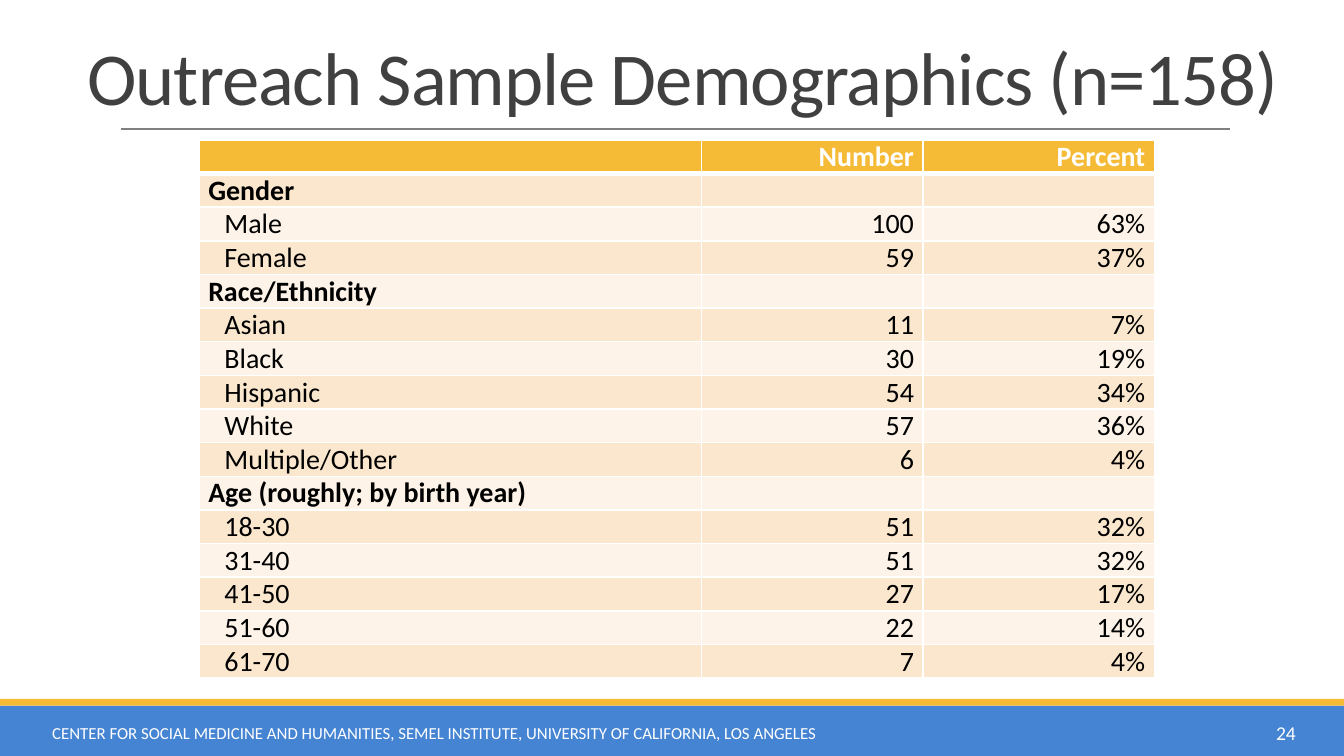
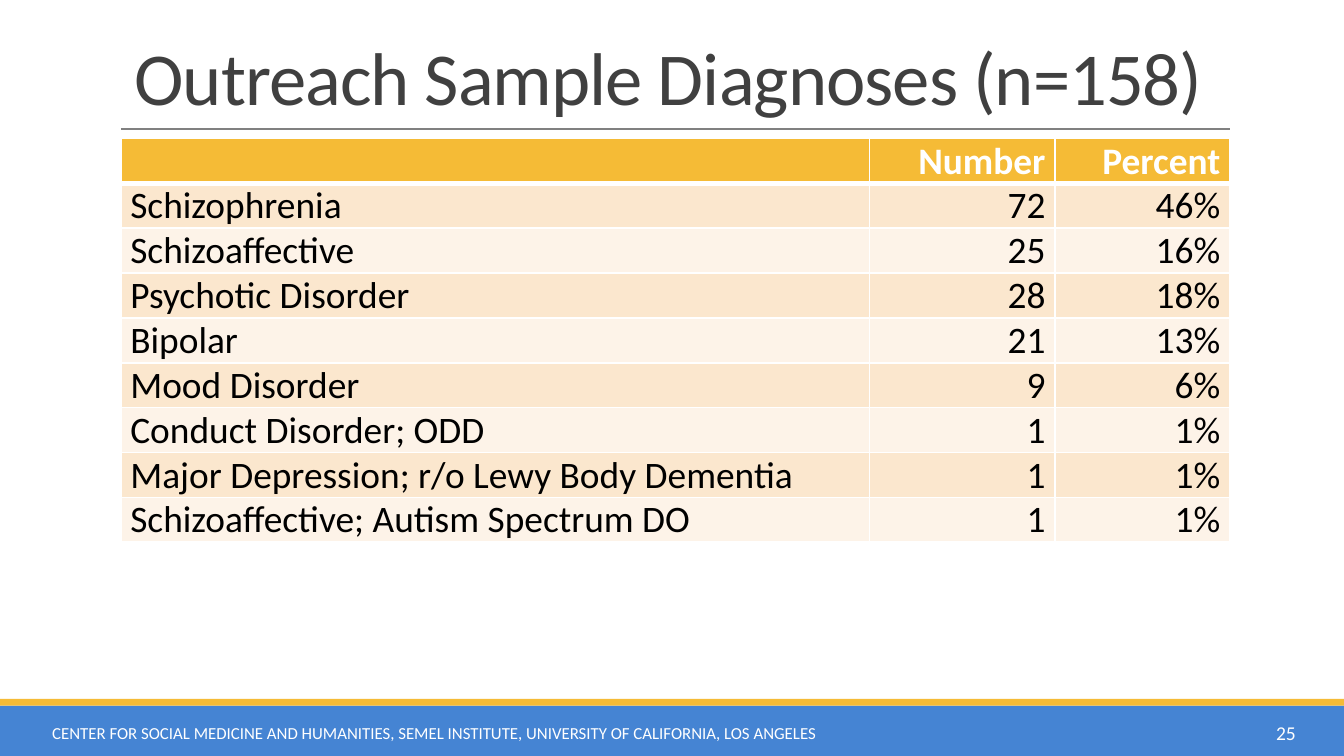
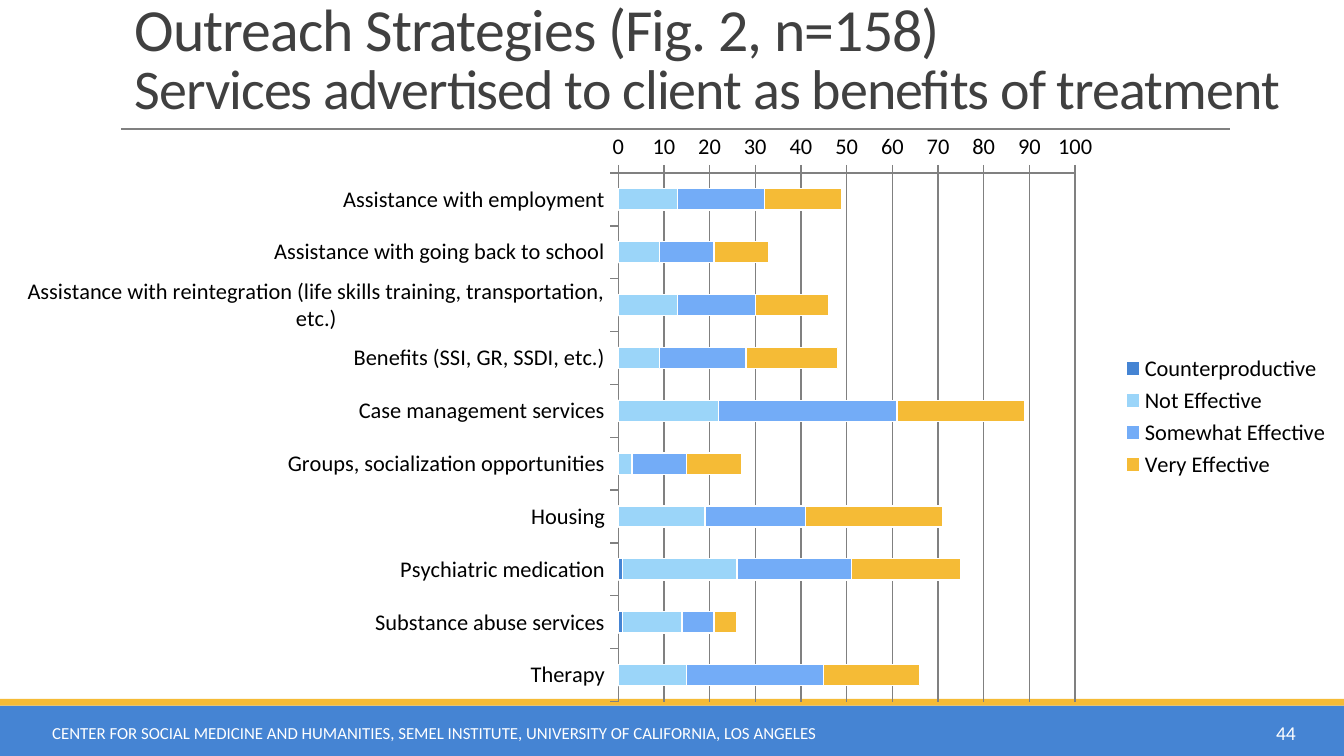
from lxml import etree
from pptx import Presentation
from pptx.chart.data import CategoryChartData
from pptx.dml.color import RGBColor
from pptx.enum.chart import XL_CHART_TYPE as ChartType, XL_LEGEND_POSITION as LegendPosition
from pptx.enum.chart import XL_TICK_MARK as TickMark
from pptx.enum.shapes import MSO_CONNECTOR as Connector, MSO_SHAPE as Shape
from pptx.enum.text import MSO_ANCHOR as Anchor, MSO_AUTO_SIZE as AutoSize, PP_ALIGN as Align
from pptx.oxml.ns import qn
from pptx.util import Inches, Pt

FONT = "Calibri"
WHITE = RGBColor(0xFF, 0xFF, 0xFF)
BLACK = RGBColor(0, 0, 0)
BLUE = RGBColor(0x45, 0x84, 0xD3)
PALE_BLUE = RGBColor(0x9B, 0xD5, 0xF9)
SOFT_BLUE = RGBColor(0x73, 0xAC, 0xF7)
GOLD = RGBColor(0xF5, 0xBB, 0x36)
PEACH = RGBColor(0xFB, 0xE7, 0xCE)
CREAM = RGBColor(0xFD, 0xF3, 0xE8)
TITLE_GRAY = RGBColor(0x40, 0x40, 0x40)
LINE_GRAY = RGBColor(0x80, 0x80, 0x80)

SLIDE_WIDTH = Inches(10)
SLIDE_HEIGHT = SLIDE_WIDTH * 9 // 16
FOOTER = "CENTER FOR SOCIAL MEDICINE AND HUMANITIES, SEMEL INSTITUTE, UNIVERSITY OF CALIFORNIA, LOS ANGELES"

HEADER = ("", " Number", "Percent")
DEMOGRAPHICS = [
    ("Gender", "", ""),
    ("Male", "100", "63%"),
    ("Female", "59", "37%"),
    ("Race/Ethnicity", "", ""),
    ("Asian", "11", "7%"),
    ("Black", "30", "19%"),
    ("Hispanic", "54", "34%"),
    ("White", "57", "36%"),
    ("Multiple/Other", "6", "4%"),
    ("Age (roughly; by birth year)", "", ""),
    ("18-30", "51", "32%"),
    ("31-40", "51", "32%"),
    ("41-50", "27", "17%"),
    ("51-60", "22", "14%"),
    ("61-70", "7", "4%"),
]
DIAGNOSES = [
    ("Schizophrenia", "72", "46%"),
    ("Schizoaffective", "25", "16%"),
    ("Psychotic Disorder", "28", "18%"),
    ("Bipolar", "21", "13%"),
    ("Mood Disorder", "9", "6%"),
    ("Conduct Disorder; ODD", "1", "1%"),
    ("Major Depression; r/o Lewy Body Dementia", "1", "1%"),
    ("Schizoaffective; Autism Spectrum DO", "1", "1%"),
]
SERVICES = [
    "Assistance with employment",
    "Assistance with going back to school",
    "Assistance with reintegration (life skills training, transportation, etc.)",
    "Benefits (SSI, GR, SSDI, etc.)",
    "Case management services",
    "Groups, socialization opportunities",
    "Housing",
    "Psychiatric medication",
    "Substance abuse services",
    "Therapy",
]
RATINGS = [
    ("Counterproductive", BLUE, (0, 0, 0, 0, 0, 0, 0, 1, 1, 0)),
    ("Not Effective", PALE_BLUE, (13, 9, 13, 9, 22, 3, 19, 25, 13, 15)),
    ("Somewhat Effective", SOFT_BLUE, (19, 12, 17, 19, 39, 12, 22, 25, 7, 30)),
    ("Very Effective", GOLD, (17, 12, 16, 20, 28, 12, 30, 24, 5, 21)),
]


def add_span(para, text, size, color, bold=False):
    """Add a formatted run to a paragraph and return it."""
    span = para.add_run()
    span.text = text
    span.font.name = FONT
    span.font.size = Pt(size)
    span.font.bold = bold
    span.font.color.rgb = color
    return span


def add_band(page, top, height, color):
    """Add a full-width coloured band."""
    band = page.shapes.add_shape(Shape.RECTANGLE, 0, top, SLIDE_WIDTH, height)
    band.shadow.inherit = False
    band.fill.solid()
    band.fill.fore_color.rgb = color
    band.line.fill.background()


def add_rule(page):
    """Add the gray line under the title."""
    rule = page.shapes.add_connector(
        Connector.STRAIGHT, Inches(0.9), Inches(0.96), Inches(9.15), Inches(0.96))
    rule.line.color.rgb = LINE_GRAY
    rule.line.width = Pt(1)
    etree.SubElement(rule._element.spPr, qn("a:effectLst"))


def add_footer_text(page, left, width, text, size, align):
    """Add one white text on the footer band."""
    box = page.shapes.add_textbox(Inches(left), Inches(5.3), Inches(width), Inches(0.3))
    frame = box.text_frame
    frame.word_wrap = True
    frame.vertical_anchor = Anchor.MIDDLE
    para = frame.paragraphs[0]
    para.alignment = align
    add_span(para, text, size, WHITE)


def set_title(page, left, width, lines):
    """Place the title and write its (text, size) lines."""
    title = page.shapes.title
    title.left, title.top = Inches(left), Inches(0.09)
    title.width, title.height = Inches(width), Inches(0.86)
    frame = title.text_frame
    frame.word_wrap = True
    frame.auto_size = AutoSize.NONE
    frame.vertical_anchor = Anchor.BOTTOM
    para = frame.paragraphs[0]
    para.alignment = Align.LEFT
    para.line_spacing = 0.85
    for index, (text, size) in enumerate(lines):
        if index:
            para.add_line_break()
            etree.SubElement(para._p[-1], qn("a:rPr"), sz=str(size * 100))
        span = add_span(para, text, size, TITLE_GRAY)
        span.font._element.set("spc", "-50")


def add_page(deck, number, title_left, title_width, title_lines):
    """Add a slide with the shared bands, rule, footer and title."""
    page = deck.slides.add_slide(deck.slide_layouts[5])
    add_band(page, Inches(5.25), SLIDE_HEIGHT - Inches(5.25), BLUE)
    add_band(page, Inches(5.2), Inches(0.05), GOLD)
    add_rule(page)
    set_title(page, title_left, title_width, title_lines)
    add_footer_text(page, 0.29, 6.67, FOOTER, 9, Align.LEFT)
    add_footer_text(page, 8.66, 1.08, str(number), 10.5, Align.RIGHT)
    return page


def set_borders(cell, row):
    """Draw white cell borders, thick between header and body."""
    widths = {"L": 1, "R": 1, "T": 3 if row == 1 else 1, "B": 3 if row == 0 else 1}
    for side, width in widths.items():
        line = etree.SubElement(cell._tc.get_or_add_tcPr(), qn(f"a:ln{side}"), w=str(Pt(width)))
        fill = etree.SubElement(line, qn("a:solidFill"))
        etree.SubElement(fill, qn("a:srgbClr"), val=str(WHITE))


def fill_cell(cell, row, text, size, align, bold, indent):
    """Format a cell and write its text."""
    set_borders(cell, row)
    cell.fill.solid()
    cell.fill.fore_color.rgb = GOLD if row == 0 else PEACH if row % 2 else CREAM
    cell.margin_left = cell.margin_right = Inches(0.07)
    cell.margin_top = cell.margin_bottom = 0
    para = cell.text_frame.paragraphs[0]
    para.alignment = align
    if indent:
        para._p.get_or_add_pPr().set("marL", str(Inches(indent)))
    if text:
        add_span(para, text, size, BLACK if row else WHITE, bold)
    else:
        etree.SubElement(para._p, qn("a:endParaRPr"), sz=str(size * 100))


def add_count_table(page, left, top, height, widths, body, size, indent=0):
    """Add a number and percent table; rows without numbers are bold headings."""
    rows = [HEADER, *body]
    frame = page.shapes.add_table(
        len(rows), len(widths), Inches(left), Inches(top), Inches(sum(widths)), Inches(height))
    table = frame.table
    for column, width in zip(table.columns, widths):
        column.width = Inches(width)
    for row, values in enumerate(rows):
        table.rows[row].height = Inches(0.25)
        heading = row == 0 or not values[1]
        for column, text in enumerate(values):
            align = Align.RIGHT if column else Align.LEFT
            cell_indent = 0 if column or heading else indent
            fill_cell(table.cell(row, column), row, text, size, align, heading, cell_indent)
    frame.height = Inches(height)


def set_plot_layout(chart, **fractions):
    """Fix the inner plot area as fractions of the chart."""
    plot_area = chart._chartSpace.find(".//" + qn("c:plotArea"))
    for old in plot_area.findall(qn("c:layout")):
        plot_area.remove(old)
    layout = etree.Element(qn("c:layout"))
    manual = etree.SubElement(layout, qn("c:manualLayout"))
    settings = {"layoutTarget": "inner", "xMode": "edge", "yMode": "edge", **fractions}
    for name, value in settings.items():
        etree.SubElement(manual, qn(f"c:{name}"), val=str(value))
    plot_area.insert(0, layout)


def add_ratings_chart(page):
    """Add the stacked bar chart of service ratings."""
    chart_data = CategoryChartData()
    chart_data.categories = SERVICES
    for name, _, values in RATINGS:
        chart_data.add_series(name, values)
    chart = page.shapes.add_chart(
        ChartType.BAR_STACKED, 0, Inches(0.89), SLIDE_WIDTH, Inches(4.42), chart_data).chart
    chart.has_title = False
    chart.font.name = FONT
    chart.font.size = Pt(12)
    chart.font.color.rgb = BLACK
    chart.has_legend = True
    chart.legend.position = LegendPosition.RIGHT
    chart.legend.include_in_layout = False
    plot = chart.plots[0]
    plot.gap_width = 150
    plot.overlap = 100
    plot.vary_by_categories = False
    for series, (_, color, _) in zip(plot.series, RATINGS):
        series.format.fill.solid()
        series.format.fill.fore_color.rgb = color
        series.format.line.color.rgb = WHITE
        series.format.line.width = Pt(0.75)
    for axis in (chart.category_axis, chart.value_axis):
        axis.major_tick_mark = TickMark.OUTSIDE
        axis.minor_tick_mark = TickMark.NONE
        axis.format.line.color.rgb = LINE_GRAY
    chart.category_axis.reverse_order = True
    scale = chart.value_axis
    scale.minimum_scale, scale.maximum_scale, scale.major_unit = 0, 100, 10
    scale.has_major_gridlines = True
    scale.major_gridlines.format.line.color.rgb = LINE_GRAY
    set_plot_layout(chart, x=0.46, y=0.09, w=0.34, h=0.89)


def main():
    """Build the deck and save it."""
    deck = Presentation()
    deck.slide_width, deck.slide_height = SLIDE_WIDTH, SLIDE_HEIGHT

    page = add_page(deck, 24, 0.55, 9.07, [("Outreach Sample Demographics (n=158)", 40)])
    add_count_table(page, 1.48, 1.04, 4, (3.74, 1.65, 1.72), DEMOGRAPHICS, 15, indent=0.12)

    page = add_page(deck, 25, 0.9, 8.25, [("Outreach Sample Diagnoses (n=158)", 40)])
    add_count_table(page, 0.9, 1.03, 3, (5.57, 1.38, 1.3), DIAGNOSES, 20)

    page = add_page(deck, 44, 0.9, 9.1, [
        ("Outreach Strategies (Fig. 2, n=158)", 32),
        ("Services advertised to client as benefits of treatment", 30),
    ])
    add_ratings_chart(page)

    deck.save("out.pptx")


if __name__ == "__main__":
    main()
